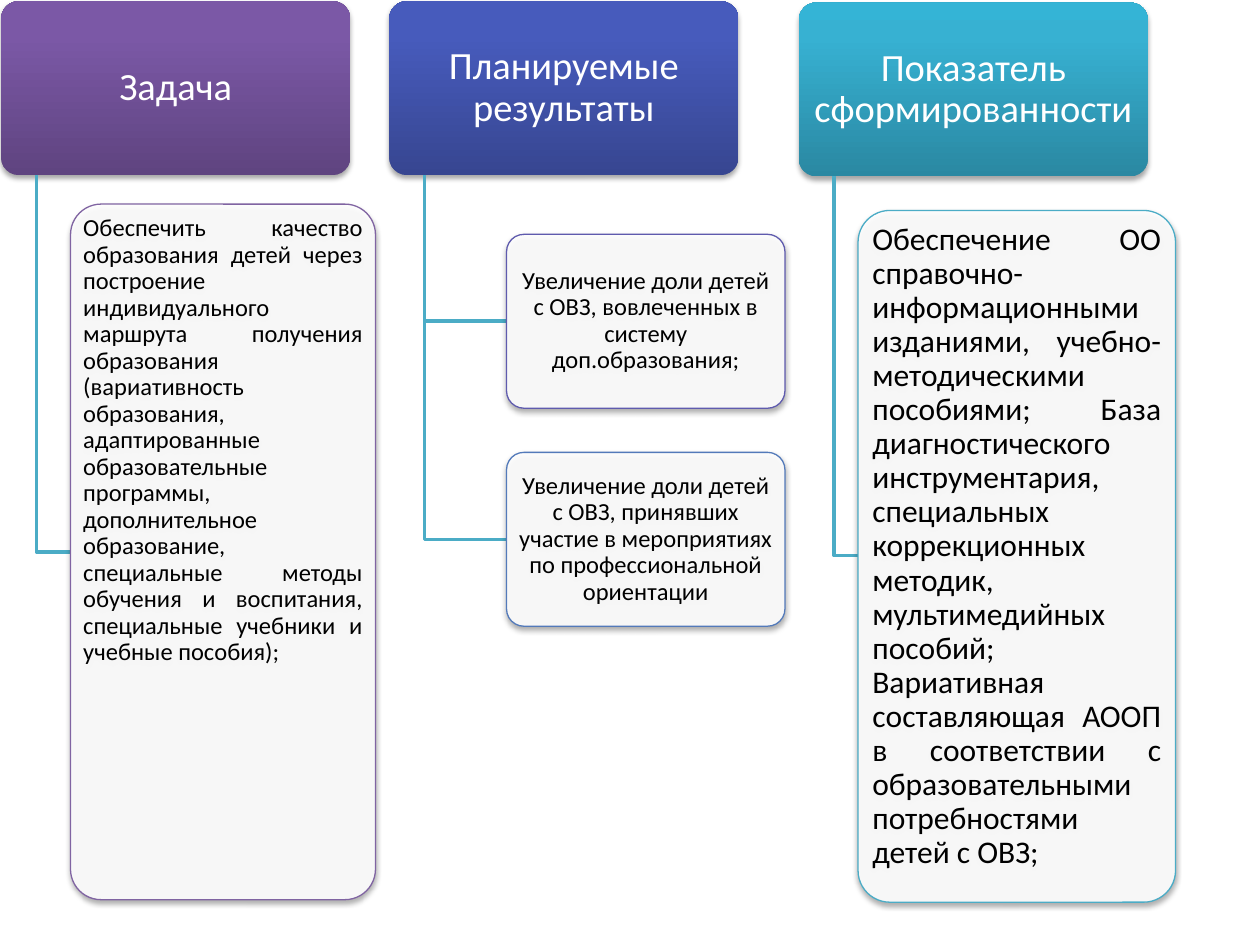
import pptx
import pptx.dml.color
import pptx.enum.shapes
import pptx.enum.text
import pptx.oxml
import pptx.oxml.ns
import pptx.util
import lxml.etree

PX = 9144  # EMU per px, 100 px to the inch
HEADER_WIDTH, HEADER_HEIGHT = 277, 138
LINK_INDENT = 28
FONT = "Calibri"
COLORS = {
    "white": "FFFFFF", "black": "000000", "link": "4BACC6",
    "purple": "8064A2", "violet": "5F5BAE", "blue": "537ABA", "teal": "4BACC6",
}
# Header gradients run from bottom to top
GRADIENTS = {
    "purple": {0: "5F4480", 80: "7B58A6", 100: "7C57A8"},
    "blue": {0: "374691", 80: "475BBC", 100: "455ABF"},
    "teal": {0: "2A88A2", 80: "37B1D2", 100: "34B4D6"},
}
ALIGN = pptx.enum.text.PP_ALIGN
ANCHOR = pptx.enum.text.MSO_ANCHOR
CENTERED = {"align": ALIGN.CENTER, "anchor": ANCHOR.MIDDLE}
JUSTIFIED = {"align": ALIGN.JUSTIFY, "anchor": ANCHOR.TOP}

# Each box is left, top, width, height
COLUMNS = [
    {"title": "Задача", "origin": (1, 1), "gradient": "purple", "cards": [
        {"box": (55, 161, 242, 552), "line": "purple", "size": 14,
         "inset": (3, 2), **JUSTIFIED,
         "text": "Обеспечить качество образования детей через построение "
                 "индивидуального маршрута получения образования (вариативность "
                 "образования, адаптированные образовательные программы, "
                 "дополнительное образование, специальные методы обучения и "
                 "воспитания, специальные учебники и учебные пособия);"}]},
    {"title": "Планируемые результаты", "origin": (309, 1), "gradient": "blue", "cards": [
        {"box": (93, 185, 221, 138), "line": "violet", "size": 14,
         "inset": (3, 2), **CENTERED,
         "text": "Увеличение доли детей с ОВЗ, вовлеченных в систему "
                 "доп.образования;"},
        {"box": (93, 358, 221, 138), "line": "blue", "size": 14,
         "inset": (3, 2), **CENTERED,
         "text": "Увеличение доли детей с ОВЗ, принявших участие в "
                 "мероприятиях по профессиональной ориентации"}]},
    {"title": "Показатель сформированности", "origin": (634, 2), "gradient": "teal", "cards": [
        {"box": (47, 165, 252, 549), "line": "teal", "size": 18,
         "inset": (4, 3), **JUSTIFIED,
         "text": "Обеспечение ОО справочно-информационными изданиями, "
                 "учебно-методическими пособиями; База диагностического "
                 "инструментария, специальных коррекционных методик, "
                 "мультимедийных пособий; Вариативная составляющая АООП в "
                 "соответствии с образовательными потребностями детей с ОВЗ;"}]},
]


def rgb(name):
    return pptx.dml.color.RGBColor.from_string(COLORS[name])


def set_all(target, values):
    for name, value in values.items():
        setattr(target, name, value)


def add_child(parent, tag, **attributes):
    return lxml.etree.SubElement(parent, pptx.oxml.ns.qn(tag), **attributes)


def add_rounded_box(page, box):
    """Rounded rectangle with a soft shadow below."""
    shape = page.shapes.add_shape(
        pptx.enum.shapes.MSO_SHAPE.ROUNDED_RECTANGLE, *(value * PX for value in box))
    shape.adjustments[0] = 0.1
    shape.shadow.inherit = False
    effects = shape._element.spPr.find(pptx.oxml.ns.qn("a:effectLst"))
    shadow = add_child(effects, "a:outerShdw", blurRad="40000", dist="23000",
                       dir="5400000", rotWithShape="0")
    color = add_child(shadow, "a:srgbClr", val=COLORS["black"])
    add_child(color, "a:alpha", val="35000")
    return shape


def write_text(shape, text, size, color, inset, align, anchor):
    across, down = (value * PX for value in inset)
    set_all(shape.text_frame, {
        "word_wrap": True, "vertical_anchor": anchor,
        "margin_left": across, "margin_right": across,
        "margin_top": down, "margin_bottom": down})
    para = shape.text_frame.paragraphs[0]
    set_all(para, {"alignment": align, "line_spacing": 0.9})
    span = para.add_run()
    span.text = text
    set_all(span.font, {"name": FONT, "size": pptx.util.Pt(size)})
    span.font.color.rgb = rgb(color)


def add_header(page, box, title, gradient):
    shape = add_rounded_box(page, box)
    shape.fill.gradient()
    shape.fill.gradient_angle = 90
    stops = shape._element.spPr.find(".//" + pptx.oxml.ns.qn("a:gsLst"))
    for stop in list(stops):
        stops.remove(stop)
    for position, color in GRADIENTS[gradient].items():
        stop = add_child(stops, "a:gs", pos=str(position * 1000))
        add_child(stop, "a:srgbClr", val=color)
    shape.line.fill.background()
    write_text(shape, title, 22, "white", (5, 3), **CENTERED)


def add_link(page, start, end):
    """Elbow line: down from the header, then right to the card."""
    builder = page.shapes.build_freeform(*start, scale=PX)
    builder.add_line_segments([(start[0], end[1]), end], close=False)
    link = builder.convert_to_shape()
    link.shadow.inherit = False
    link.fill.background()
    link.line.color.rgb = rgb("link")
    link.line.width = pptx.util.Pt(2)


def add_card(page, box, text, line, size, inset, align, anchor):
    shape = add_rounded_box(page, box)
    shape.fill.solid()
    shape.fill.fore_color.rgb = rgb("white")
    color = shape._element.spPr.find(
        pptx.oxml.ns.qn("a:solidFill")).find(pptx.oxml.ns.qn("a:srgbClr"))
    add_child(color, "a:alpha", val="90000")
    shape.line.color.rgb = rgb(line)
    shape.line.width = pptx.util.Pt(0.75)
    write_text(shape, text, size, "black", inset, align, anchor)


def add_column(page, origin, title, gradient, cards):
    left, top = origin
    add_header(page, (left, top, HEADER_WIDTH, HEADER_HEIGHT), title, gradient)
    for card in cards:
        card_left, card_top, width, height = card["box"]
        box = (left + card_left, top + card_top, width, height)
        add_link(page, (left + LINK_INDENT, top + HEADER_HEIGHT),
                 (box[0], box[1] + height // 2))
        add_card(page, **{**card, "box": box})


def main():
    deck = pptx.Presentation()
    set_all(deck, {"slide_width": 1000 * PX, "slide_height": 750 * PX})
    page = deck.slides.add_slide(deck.slide_layouts[6])
    for column in COLUMNS:
        add_column(page, **column)
    deck.save("out.pptx")


if __name__ == "__main__":
    main()
